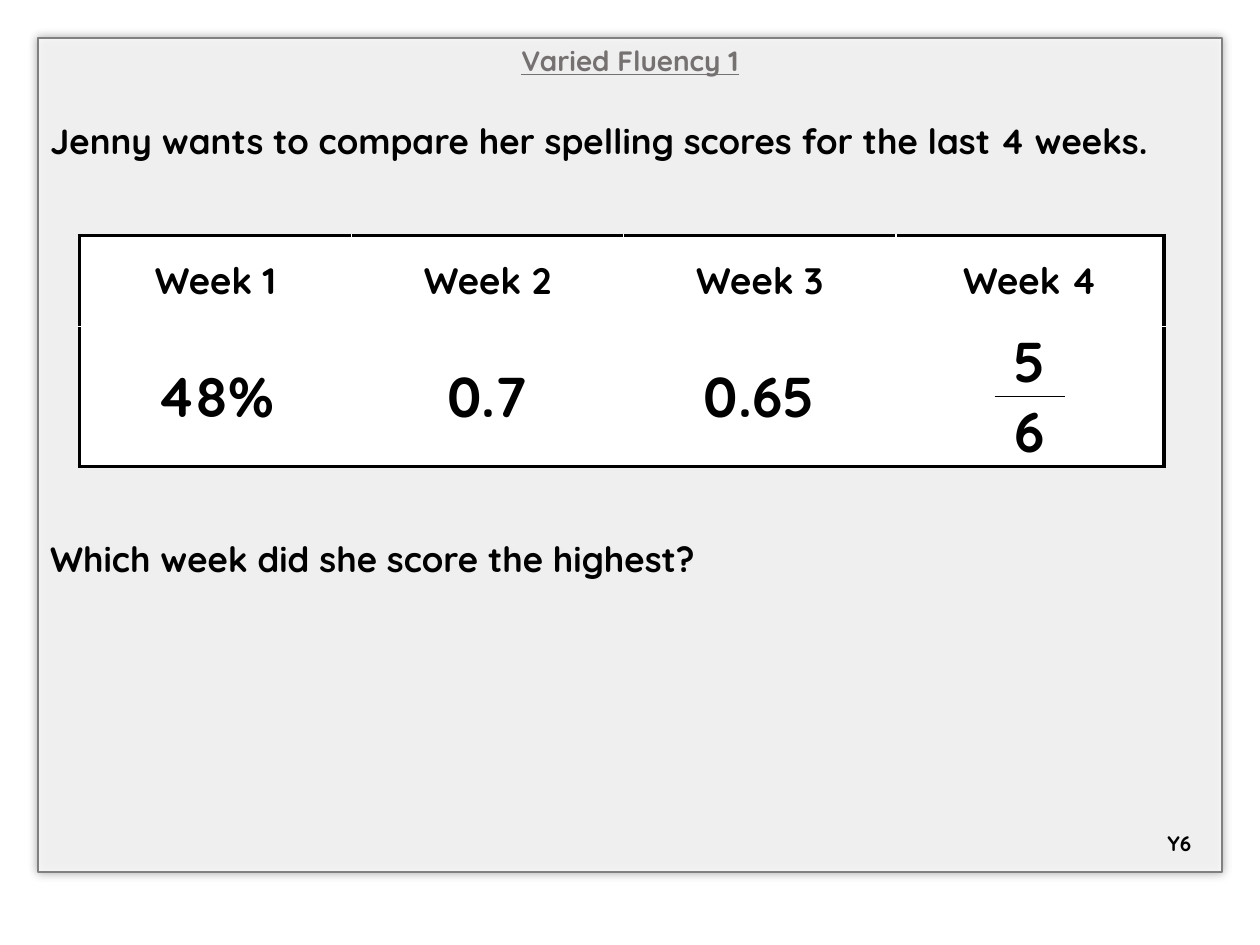
import pptx
import pptx.dml.color
import pptx.enum.shapes
import pptx.enum.text
import pptx.oxml
import pptx.oxml.ns
import pptx.util
from pptx.util import Inches

BLACK = pptx.dml.color.RGBColor(0, 0, 0)
WHITE = pptx.dml.color.RGBColor(255, 255, 255)
TITLE_GREY = pptx.dml.color.RGBColor(0x76, 0x71, 0x71)
EDGE_GREY = pptx.dml.color.RGBColor(0x80, 0x80, 0x80)
FONT = "Quicksand"
CENTER = pptx.enum.text.PP_ALIGN.CENTER
LEFT = pptx.enum.text.PP_ALIGN.LEFT
MIDDLE = pptx.enum.text.MSO_ANCHOR.MIDDLE
NS = pptx.oxml.ns.nsdecls("a")

COLUMNS = [2.16, 2.16, 2.16, 0.79, 0.55, 0.79]
ROWS = [0.72, 0.54, 0.54]
FRACTION_COLUMN = 4
WEEKS = ["Week 1", "Week 2", "Week 3", "Week 4"]
SCORES = ["48%", "0.7", "0.65"]


def write(paragraph, text, size, color=BLACK, align=CENTER, underline=False):
    paragraph.alignment = align
    run = paragraph.add_run()
    run.text = text
    run.font.name = FONT
    run.font.size = pptx.util.Pt(size)
    run.font.bold = True
    run.font.underline = underline
    run.font.color.rgb = color


def add_panel(slide):
    """Translucent panel with a soft shadow, holding the title and questions."""
    panel = slide.shapes.add_shape(
        pptx.enum.shapes.MSO_SHAPE.RECTANGLE,
        Inches(0.3), Inches(0.3), Inches(9.4), Inches(6.62))
    panel.fill.solid()
    panel.fill.fore_color.rgb = WHITE
    fill_color = panel.fill._xPr.find(".//" + pptx.oxml.ns.qn("a:srgbClr"))
    fill_color.append(pptx.oxml.parse_xml(f'<a:alpha {NS} val="82000"/>'))
    panel.line.color.rgb = EDGE_GREY
    panel.line.width = pptx.util.Pt(1)
    panel.shadow.inherit = False
    effects = panel._element.spPr.find(pptx.oxml.ns.qn("a:effectLst"))
    effects.append(pptx.oxml.parse_xml(
        f'<a:outerShdw {NS} blurRad="63500" dist="0" algn="ctr" rotWithShape="0">'
        '<a:srgbClr val="000000"><a:alpha val="40000"/></a:srgbClr></a:outerShdw>'))

    frame = panel.text_frame
    frame.word_wrap = True
    frame.vertical_anchor = pptx.enum.text.MSO_ANCHOR.TOP
    write(frame.paragraphs[0], "Varied Fluency 1", 16, TITLE_GREY, underline=True)
    for question, gap in [
        ("Jenny wants to compare her spelling scores for the last 4 weeks.", 24),
        ("Which week did she score the highest?", 215),
    ]:
        paragraph = frame.add_paragraph()
        paragraph.space_before = pptx.util.Pt(gap)
        write(paragraph, question, 20, align=LEFT)


def set_borders(cell, widths):
    """Black borders; widths maps the sides L, R, T, B to points."""
    properties = cell._tc.get_or_add_tcPr()
    sides = [side for side in "LRTB" if side in widths]
    for index, side in enumerate(sides):
        properties.insert(index, pptx.oxml.parse_xml(
            f'<a:ln{side} {NS} w="{pptx.util.Pt(widths[side])}">'
            '<a:solidFill><a:srgbClr val="000000"/></a:solidFill>'
            f'</a:ln{side}>'))


def borders_at(row, column):
    edges = {"L": column == 0, "R": column == len(COLUMNS) - 1,
             "T": row == 0, "B": row == len(ROWS) - 1}
    if row == 0 and column == 3:
        edges["R"] = True
    if row == 1 and column != FRACTION_COLUMN:
        edges["B"] = True
    widths = {side: 2.25 for side, outer in edges.items() if outer}
    if column == FRACTION_COLUMN and row > 0:
        widths["B" if row == 1 else "T"] = 1
    return widths


def fill_cell(cell, text, size, inset_x=0.11, inset_y=0.06):
    cell.vertical_anchor = MIDDLE
    cell.margin_left = cell.margin_right = Inches(inset_x)
    cell.margin_top = cell.margin_bottom = Inches(inset_y)
    write(cell.text_frame.paragraphs[0], text, size)


def add_scores(slide):
    table = slide.shapes.add_table(
        len(ROWS), len(COLUMNS), Inches(0.63), Inches(1.87),
        Inches(sum(COLUMNS)), Inches(sum(ROWS))).table
    for column, width in zip(table.columns, COLUMNS):
        column.width = Inches(width)
    for row, height in zip(table.rows, ROWS):
        row.height = Inches(height)

    for row in range(len(ROWS)):
        for column in range(len(COLUMNS)):
            cell = table.cell(row, column)
            cell.fill.solid()
            cell.fill.fore_color.rgb = WHITE
            set_borders(cell, borders_at(row, column))

    table.cell(0, 3).merge(table.cell(0, 5))
    for column in range(len(COLUMNS)):
        if column != FRACTION_COLUMN:
            table.cell(1, column).merge(table.cell(2, column))

    for column, week in enumerate(WEEKS):
        fill_cell(table.cell(0, column), week, 21, 0, 0)
    for column, score in enumerate(SCORES):
        fill_cell(table.cell(1, column), score, 32)
    for row, number in enumerate(["5", "6"], start=1):
        fill_cell(table.cell(row, FRACTION_COLUMN), number, 32, 0, 0)


def add_year_label(slide):
    label = slide.shapes.add_textbox(
        Inches(9.11), Inches(6.54), Inches(0.5), Inches(0.3))
    label.text_frame.word_wrap = True
    label.text_frame.vertical_anchor = MIDDLE
    write(label.text_frame.paragraphs[0], "Y6", 12)


def main():
    deck = pptx.Presentation()
    deck.slide_width, deck.slide_height = Inches(10), Inches(7.5)
    slide = deck.slides.add_slide(deck.slide_layouts[6])
    add_panel(slide)
    add_scores(slide)
    add_year_label(slide)
    deck.save("out.pptx")


if __name__ == "__main__":
    main()
